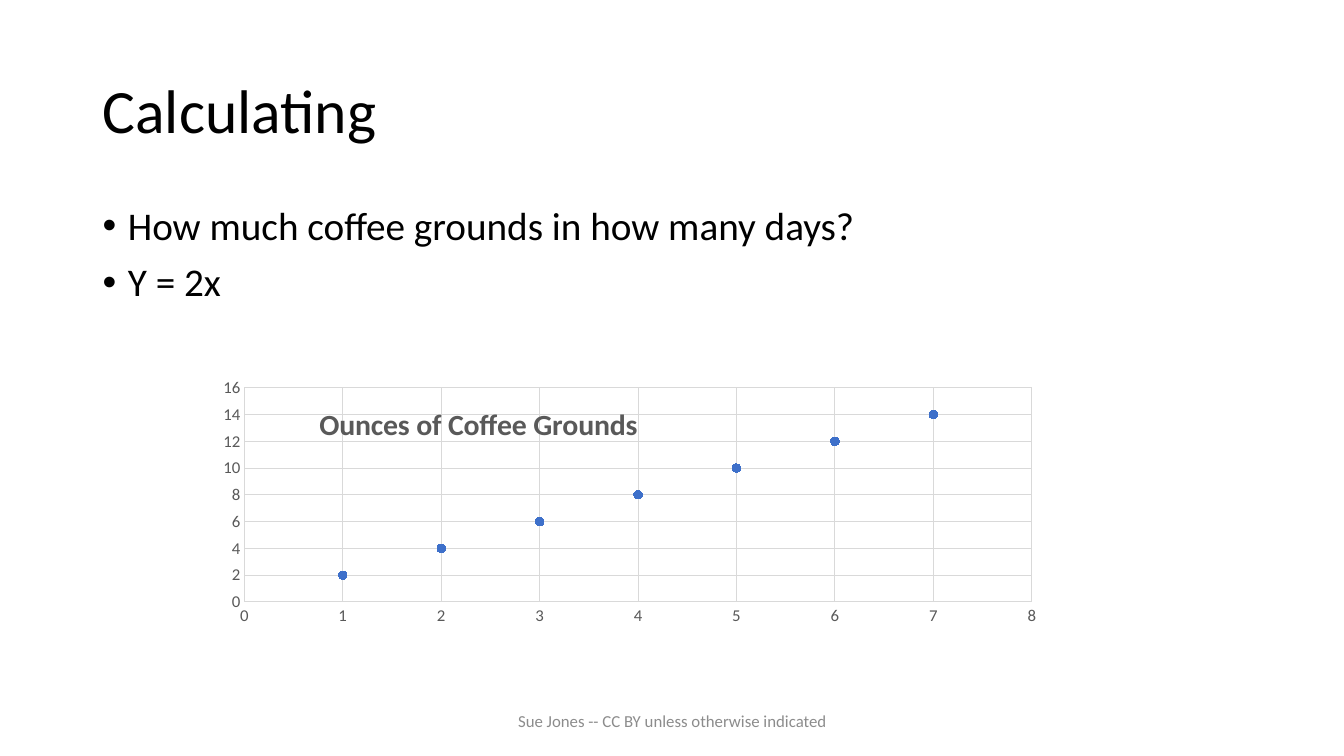
from lxml import etree
from pptx import Presentation
from pptx.chart.data import XyChartData
from pptx.dml.color import RGBColor
from pptx.enum.chart import XL_CHART_TYPE, XL_MARKER_STYLE, XL_TICK_MARK
from pptx.enum.text import MSO_ANCHOR, PP_ALIGN
from pptx.oxml import parse_xml
from pptx.oxml.ns import nsdecls, qn
from pptx.util import Inches, Pt

SCATTER = XL_CHART_TYPE.XY_SCATTER
CIRCLE = XL_MARKER_STYLE.CIRCLE
NO_TICK = XL_TICK_MARK.NONE
TOP, MIDDLE = MSO_ANCHOR.TOP, MSO_ANCHOR.MIDDLE
LEFT, CENTER = PP_ALIGN.LEFT, PP_ALIGN.CENTER

BLACK = RGBColor(0x00, 0x00, 0x00)
FOOTER_GRAY = RGBColor(0x8C, 0x8C, 0x8C)
LABEL_GRAY = RGBColor(0x59, 0x59, 0x59)
GRID_GRAY = RGBColor(0xD9, 0xD9, 0xD9)
MARKER_BLUE = RGBColor(0x3E, 0x70, 0xCA)
FONT = "Calibri"

CHART_TITLE = "Ounces of Coffee Grounds"
DAYS = range(1, 8)
OUNCES_PER_DAY = 2


def set_font(font, size, color, bold=False):
    values = {"name": FONT, "size": Pt(size), "bold": bold}
    for name, value in values.items():
        setattr(font, name, value)
    font.color.rgb = color


def add_text(slide, box, lines, size, color=BLACK, anchor=TOP, paragraph_format=None):
    """Add one paragraph per line and return the paragraphs."""
    frame = slide.shapes.add_textbox(*map(Inches, box)).text_frame
    frame.word_wrap = True
    frame.vertical_anchor = anchor
    frame.text = "\n".join(lines)
    for para in frame.paragraphs:
        for name, value in (paragraph_format or {}).items():
            setattr(para, name, value)
        set_font(para.runs[0].font, size, color)
    return frame.paragraphs


def add_title(slide, box):
    add_text(slide, box, ["Calculating"], 44, anchor=MIDDLE,
             paragraph_format={"alignment": LEFT, "line_spacing": 0.9})


def add_bullets(slide, box):
    lines = ["How much coffee grounds in how many days?", "Y = 2x"]
    paragraphs = add_text(slide, box, lines, 28, paragraph_format={
        "alignment": LEFT, "line_spacing": 0.9, "space_before": Pt(10)})
    for para in paragraphs:
        properties = para._p.get_or_add_pPr()
        properties.set("marL", str(Inches(0.25)))
        properties.set("indent", str(-Inches(0.25)))
        etree.SubElement(properties, qn("a:buFont")).set("typeface", "Arial")
        etree.SubElement(properties, qn("a:buChar")).set("char", "•")


def add_footer(slide, box):
    add_text(slide, box, ["Sue Jones -- CC BY unless otherwise indicated"], 12,
             FOOTER_GRAY, MIDDLE, {"alignment": CENTER})


def set_layout(parent, position, settings):
    """Give a chart part a manual layout as its child at the position."""
    for old in parent.findall(qn("c:layout")):
        parent.remove(old)
    entries = "".join(f'<c:{name} val="{value}"/>' for name, value in settings.items())
    parent.insert(position, parse_xml(
        f'<c:layout {nsdecls("c")}><c:manualLayout>{entries}</c:manualLayout></c:layout>'))


def format_axis(axis, maximum, step):
    values = {"minimum_scale": 0, "maximum_scale": maximum, "major_unit": step,
              "major_tick_mark": NO_TICK, "minor_tick_mark": NO_TICK,
              "has_major_gridlines": True}
    for name, value in values.items():
        setattr(axis, name, value)
    set_font(axis.tick_labels.font, 12, LABEL_GRAY)
    axis.format.line.fill.background()
    grid = axis.major_gridlines.format.line
    grid.width = Pt(0.75)
    grid.color.rgb = GRID_GRAY


def add_coffee_chart(slide, box):
    data = XyChartData()
    points = data.add_series(CHART_TITLE)
    for day in DAYS:
        points.add_data_point(day, OUNCES_PER_DAY * day)
    chart = slide.shapes.add_chart(SCATTER, *map(Inches, box), data).chart
    set_font(chart.font, 10, BLACK)
    chart.has_legend = False

    chart.has_title = True
    title = chart.chart_title
    title.text_frame.text = CHART_TITLE
    set_font(title.text_frame.paragraphs[0].runs[0].font, 21.3, LABEL_GRAY, bold=True)
    title.include_in_layout = True
    title_xml = title._element
    title_xml.find(qn("c:overlay")).set("val", "1")
    set_layout(title_xml, 1, {"xMode": "edge", "yMode": "edge", "x": 0.11, "y": 0.06})
    set_layout(chart._chartSpace.chart.plotArea, 0, {
        "layoutTarget": "inner", "xMode": "edge", "yMode": "edge",
        "x": 0.026, "y": 0.019, "w": 0.949, "h": 0.795})

    format_axis(chart.category_axis, 8, 1)
    format_axis(chart.value_axis, 16, 2)

    plot = chart.plots[0]
    plot.vary_by_categories = False
    series = plot.series[0]
    series.smooth = False
    series.format.line.fill.background()
    marker = series.marker
    marker.style = CIRCLE
    marker.size = 6
    marker.format.fill.solid()
    marker.format.fill.fore_color.rgb = MARKER_BLUE
    marker.format.line.color.rgb = MARKER_BLUE


def main():
    deck = Presentation()
    deck.slide_width, deck.slide_height = Inches(13.33), Inches(7.5)
    slide = deck.slides.add_slide(deck.slide_layouts[6])
    add_title(slide, (0.92, 0.4, 11.5, 1.45))
    add_bullets(slide, (0.92, 2, 11.5, 4.76))
    add_footer(slide, (4.42, 6.95, 4.5, 0.4))
    add_coffee_chart(slide, (2.21, 3.75, 8.23, 2.72))
    deck.save("out.pptx")


if __name__ == "__main__":
    main()
